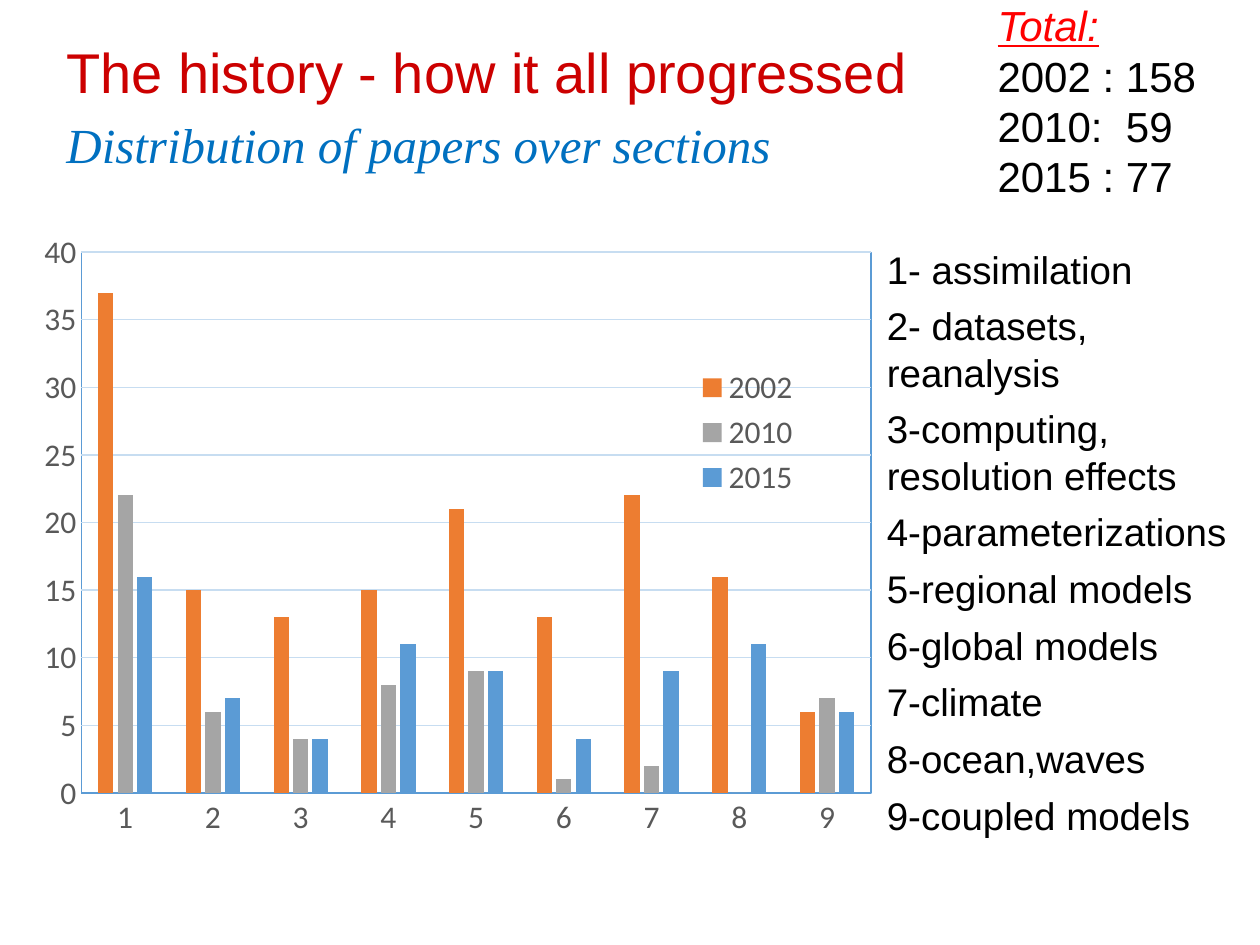
from lxml.etree import SubElement
from pptx import Presentation
from pptx.chart.data import CategoryChartData
from pptx.dml.color import RGBColor
from pptx.enum.chart import XL_CHART_TYPE, XL_LEGEND_POSITION, XL_TICK_MARK
from pptx.enum.text import MSO_ANCHOR, MSO_AUTO_SIZE
from pptx.oxml import parse_xml
from pptx.oxml.ns import nsdecls, qn
from pptx.util import Cm, Pt

RED = dict(name="Arial", size=24, color="FF0000", italic=True, underline=True)
BLACK = dict(name="Arial", size=24, color="000000")
TITLE = dict(name="Arial", size=32, color="CC0000")
SUB = dict(name="Times New Roman", size=28, color="0070C0", italic=True)
ITEM = dict(name="Arial", size=22, color="000000")
AXIS = dict(name="Calibri", size=18, color="595959")

GROW = dict(auto_size=MSO_AUTO_SIZE.SHAPE_TO_FIT_TEXT, word_wrap=False)
# box in cm, frame format, paragraph format, lines with their font
TEXTS = [
    ((1.09, 0.43, 21.89, 2.18),
     dict(word_wrap=True, vertical_anchor=MSO_ANCHOR.MIDDLE),
     dict(line_spacing=0.9),
     [("The history - how it all progressed", TITLE)]),
    ((19.86, -0.13, 4.55, 4.37), GROW, {},
     [("Total:", RED), ("2002 : 158", BLACK),
      ("2010:  59", BLACK), ("2015 : 77", BLACK)]),
    ((1.09, 2.18, 15.09, 1.45), GROW, {},
     [("Distribution of papers over sections", SUB)]),
    ((17.63, 4.83, 7.47, 12.32), GROW | dict(word_wrap=True),
     dict(space_before=Pt(6)),
     [(line, ITEM) for line in (
         "1- assimilation", "2- datasets, reanalysis",
         "3-computing, resolution effects", "4-parameterizations",
         "5-regional models", "6-global models", "7-climate",
         "8-ocean,waves", "9-coupled models")]),
]

CHART = (0, 4.19, 17.63, 12.95)
PLOT = (0.093, 0.069, 0.903, 0.842)
KEY = (0.79, 0.24, 0.13, 0.22)
BLUE, GRID = "5B9BD5", "C7DDF1"
SERIES = [
    ("2002", "ED7D31", (37, 15, 13, 15, 21, 13, 22, 16, 6)),
    ("2010", "A5A5A5", (22, 6, 4, 8, 9, 1, 2, 0, 7)),
    ("2015", BLUE, (16, 7, 4, 11, 9, 4, 9, 11, 6)),
]


def rgb(code):
    return RGBColor.from_string(code)


def apply(item, form):
    for key, value in form.items():
        setattr(item, key, value)


def style(font, form):
    for key, value in form.items():
        if key == "color":
            font.color.rgb = rgb(value)
        else:
            setattr(font, key, Pt(value) if key == "size" else value)


def stroke(line, code):
    line.color.rgb = rgb(code)
    line.width = Pt(0.75)


def write(slide, box, frame, para, lines):
    text = slide.shapes.add_textbox(*map(Cm, box)).text_frame
    apply(text, frame)
    for i, (words, form) in enumerate(lines):
        par = text.add_paragraph() if i else text.paragraphs[0]
        apply(par, para)
        run = par.add_run()
        run.text = words
        style(run.font, form)


def place(node, box, inner=False):
    """Fix a chart part at fractions of the chart's size."""
    old = node.find(qn("c:layout"))
    if old is None:
        old = parse_xml(f"<c:layout {nsdecls('c')}/>")
        if inner:
            node.insert(0, old)
        else:
            node.find(qn("c:legendPos")).addnext(old)
    spot = SubElement(old, qn("c:manualLayout"))
    parts = [("layoutTarget", "inner")] if inner else []
    parts += [("xMode", "edge"), ("yMode", "edge"), *zip("xywh", box)]
    for tag, value in parts:
        SubElement(spot, qn("c:" + tag)).set("val", str(value))


def draw(slide):
    data = CategoryChartData()
    data.categories = [str(n) for n in range(1, 10)]
    for name, _, values in SERIES:
        data.add_series(name, values)
    chart = slide.shapes.add_chart(
        XL_CHART_TYPE.COLUMN_CLUSTERED, *map(Cm, CHART), data).chart
    apply(chart, dict(has_title=False, has_legend=True))
    style(chart.font, AXIS)

    plot = chart.plots[0]
    apply(plot, dict(gap_width=219, overlap=-27, vary_by_categories=False))
    for bar, (_, code, _) in zip(plot.series, SERIES):
        bar.format.fill.solid()
        bar.format.fill.fore_color.rgb = rgb(code)

    for axis in (chart.category_axis, chart.value_axis):
        apply(axis, dict(major_tick_mark=XL_TICK_MARK.NONE,
                         minor_tick_mark=XL_TICK_MARK.NONE))
        style(axis.tick_labels.font, AXIS)
    stroke(chart.category_axis.format.line, BLUE)
    rise = chart.value_axis
    apply(rise, dict(minimum_scale=0, maximum_scale=40, major_unit=5,
                     has_major_gridlines=True))
    rise.format.line.fill.background()
    stroke(rise.major_gridlines.format.line, GRID)

    key = chart.legend
    apply(key, dict(position=XL_LEGEND_POSITION.RIGHT,
                    include_in_layout=False))
    key._element.find(qn("c:overlay")).set("val", "1")
    style(key.font, AXIS)
    place(key._element, KEY)

    area = chart._chartSpace.chart.plotArea
    place(area, PLOT, inner=True)
    area.append(parse_xml(
        f'<c:spPr {nsdecls("c", "a")}><a:noFill/><a:ln w="9525"><a:solidFill>'
        f'<a:srgbClr val="{BLUE}"/></a:solidFill></a:ln></c:spPr>'))


def main():
    deck = Presentation()
    apply(deck, dict(slide_width=Cm(25.4), slide_height=Cm(19.05)))
    slide = deck.slides.add_slide(deck.slide_layouts[6])
    for text in TEXTS:
        write(slide, *text)
    draw(slide)
    deck.save("out.pptx")


if __name__ == "__main__":
    main()
